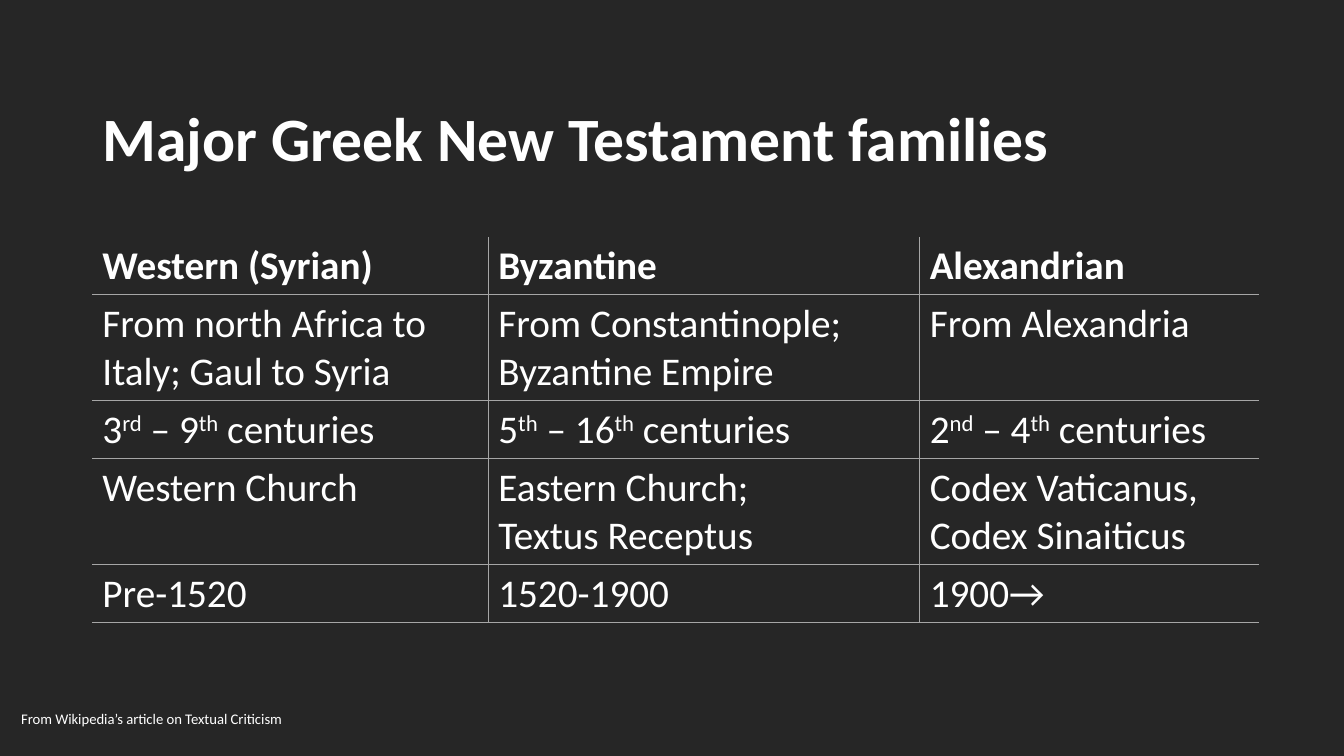
from lxml import etree
from pptx import Presentation
from pptx import util as u
from pptx.dml.color import RGBColor
from pptx.enum import text
from pptx.oxml import ns

TITLE = "Major Greek New Testament families"
CREDIT = "From Wikipedia’s article on Textual Criticism"
# In cells, ^ opens and closes a superscript, | breaks a line, \n starts a paragraph.
FAMILIES = [
    ("Western (Syrian)", "Byzantine", "Alexandrian"),
    ("From north Africa to|Italy; Gaul to Syria",
     "From Constantinople;|Byzantine Empire", "From Alexandria"),
    ("3^rd^ – 9^th^ centuries", "5^th^ – 16^th^ centuries", "2^nd^ – 4^th^ centuries"),
    ("Western Church", "Eastern Church;\nTextus Receptus",
     "Codex Vaticanus,\nCodex Sinaiticus"),
    ("Pre-1520", "1520-1900", "1900→"),
]
COLUMN_WIDTHS = (282.8, 308.2, 242.4)
ONE_LINE, TWO_LINES = 41.4, 75.6
ROW_HEIGHTS = (ONE_LINE, TWO_LINES, ONE_LINE, TWO_LINES, ONE_LINE)

BACKGROUND = RGBColor(0x26, 0x26, 0x26)
WHITE = RGBColor(0xFF, 0xFF, 0xFF)
GRID = RGBColor(0xA6, 0xA6, 0xA6)


def format_font(font, size, bold=False):
    values = {"name": "Calibri", "size": u.Pt(size), "bold": bold}
    for name, value in values.items():
        setattr(font, name, value)
    font.color.rgb = WHITE


def fill_line_box(box, words, size, bold=False):
    frame = box.text_frame
    frame.word_wrap = True
    frame.vertical_anchor = text.MSO_ANCHOR.MIDDLE
    para = frame.paragraphs[0]
    para.alignment = text.PP_ALIGN.LEFT
    para.line_spacing = 0.9
    span = para.add_run()
    span.text = words
    format_font(span.font, size, bold)


def write_cell(cell, words, bold):
    frame = cell.text_frame
    for number, paragraph_words in enumerate(words.split("\n")):
        para = frame.add_paragraph() if number else frame.paragraphs[0]
        format_font(para.font, 28, bold)
        for line_number, line in enumerate(paragraph_words.split("|")):
            if line_number:
                para.add_line_break()
            for part_number, part in enumerate(line.split("^")):
                span = para.add_run()
                span.text = part
                format_font(span.font, 28, bold)
                if part_number % 2:
                    span.font._element.set("baseline", "30000")


def draw_borders(cell, visible):
    """Draw the sides named in visible (L, R, T, B) and clear the others."""
    properties = cell._tc.get_or_add_tcPr()
    for side in "LRTB":
        line = etree.SubElement(properties, ns.qn(f"a:ln{side}"), w=str(u.Pt(1)))
        if side in visible:
            fill = etree.SubElement(line, ns.qn("a:solidFill"))
            etree.SubElement(fill, ns.qn("a:srgbClr"), val=str(GRID))
        else:
            etree.SubElement(line, ns.qn("a:noFill"))


def add_family_table(slide):
    last_column = len(COLUMN_WIDTHS) - 1
    table = slide.shapes.add_table(
        len(FAMILIES), len(COLUMN_WIDTHS), u.Pt(66), u.Pt(169.2),
        u.Pt(sum(COLUMN_WIDTHS)), u.Pt(sum(ROW_HEIGHTS))).table
    table.first_row = table.horz_banding = False
    for column, width in zip(table.columns, COLUMN_WIDTHS):
        column.width = u.Pt(width)
    for row, height in zip(table.rows, ROW_HEIGHTS):
        row.height = u.Pt(height)
    for r, family_row in enumerate(FAMILIES):
        for c, words in enumerate(family_row):
            cell = table.cell(r, c)
            visible = "B" + "T" * (r > 0) + "L" * (c > 0) + "R" * (c < last_column)
            draw_borders(cell, visible)
            cell.fill.background()
            write_cell(cell, words, bold=r == 0)


def main():
    deck = Presentation()
    deck.slide_width, deck.slide_height = u.Pt(960), u.Pt(540)
    slide = deck.slides.add_slide(deck.slide_layouts[5])
    slide.background.fill.solid()
    slide.background.fill.fore_color.rgb = BACKGROUND

    title = slide.shapes.title
    title.left, title.top, title.width, title.height = map(u.Pt, (66, 49, 828, 104.4))
    fill_line_box(title, TITLE, 44, bold=True)

    add_family_table(slide)

    credit = slide.shapes.add_textbox(*map(u.Pt, (8, 496.8, 551.5, 34.6)))
    fill_line_box(credit, CREDIT, 10.5)
    deck.save("out.pptx")


if __name__ == "__main__":
    main()
